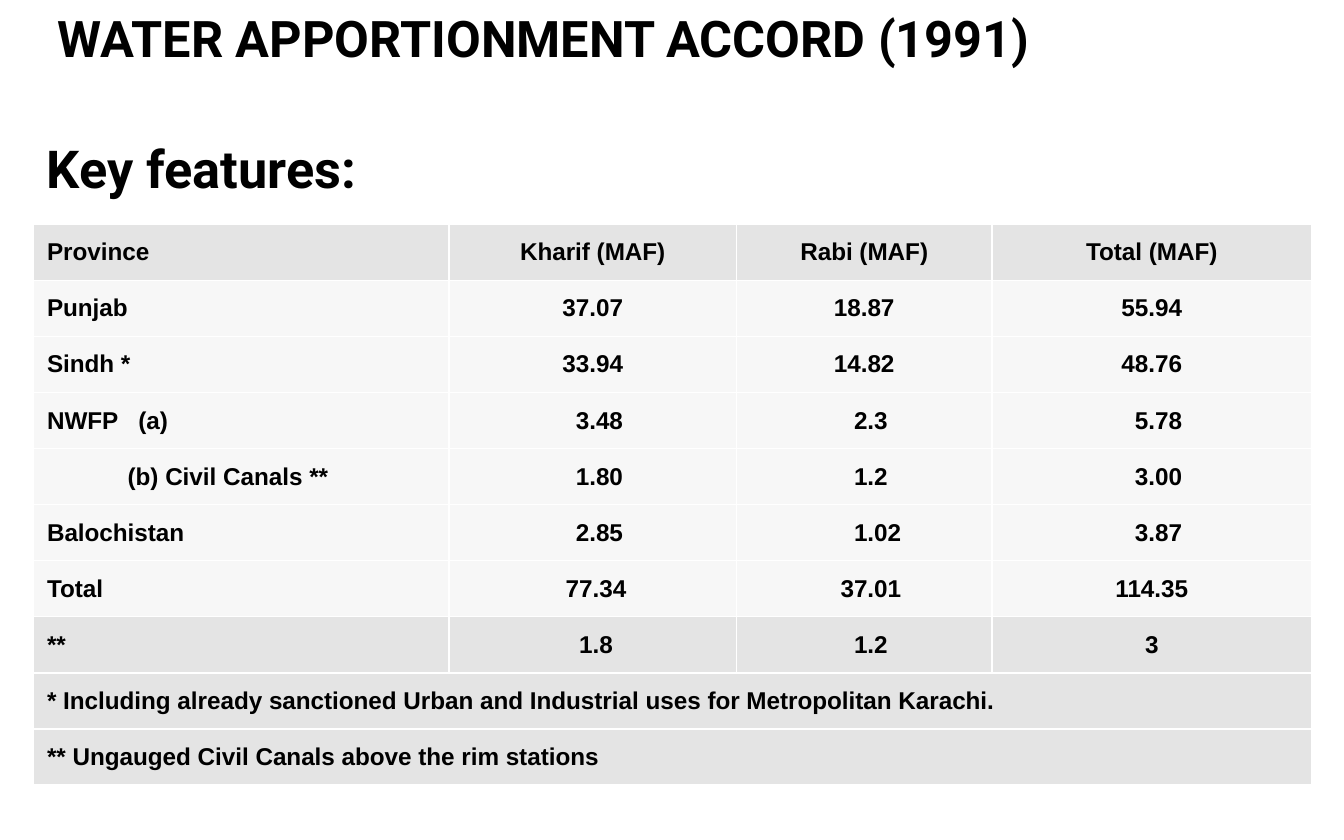
"""Build the water accord slide with its table of provincial shares."""
from pptx import Presentation
from pptx.dml.color import RGBColor
from pptx.enum.text import MSO_ANCHOR, PP_ALIGN
from pptx.util import Inches, Pt
from lxml.etree import SubElement
from pptx.oxml.ns import qn

HUES = {"ink": "000000", "band": "E4E4E4", "row": "F7F7F7"}


def write(frame, text, font="Arial", size=13, align=PP_ALIGN.LEFT):
    frame.word_wrap = True
    para = frame.paragraphs[0]
    para.alignment = align
    run = para.add_run()
    run.text = text
    run.font.name = font
    run.font.size = Pt(size)
    run.font.bold = True
    run.font.color.rgb = RGBColor.from_string(HUES["ink"])
    return para


deck = Presentation()
deck.slide_width = Inches(10)
deck.slide_height = Inches(6.25)
slide = deck.slides.add_slide(deck.slide_layouts[6])

rows = [
    ["Province", "Kharif (MAF)", "Rabi (MAF)", "Total (MAF)"],
    ["Punjab", "37.07", "18.87", "55.94"],
    ["Sindh *", "33.94", "14.82", "48.76"],
    ["NWFP\t(a)", "3.48", "2.3", "5.78"],
    ["(b) Civil Canals **", "1.80", "1.2", "3.00"],
    ["Balochistan", "2.85", "1.02", "3.87"],
    ["Total", "77.34", "37.01", "114.35"],
    ["**", "1.8", "1.2", "3"],
    ["* Including already sanctioned Urban and Industrial uses for Metropolitan Karachi."],
    ["** Ungauged Civil Canals above the rim stations"],
]
shifts = {
    3: [0, 0.1, 0.1, 0.1],
    4: [0.6, 0.1, 0.1, 0.1],
    5: [0, 0.1, 0.2, 0.1],
    6: [0, 0.05, 0.1, 0],
    7: [0, 0.05, 0.1, 0],
}
widths = [3.09, 2.14, 1.9, 2.38]

grid = slide.shapes.add_table(
    len(rows), len(widths), Inches(0.25), Inches(1.67), Inches(9.5), Inches(4.17)
).table
grid.first_row = False
grid.horz_banding = False
for col, width in zip(grid.columns, widths):
    col.width = Inches(width)

for r, row in enumerate(rows):
    grid.rows[r].height = Inches(4.17 / len(rows))
    if len(row) == 1:
        grid.cell(r, 0).merge(grid.cell(r, len(widths) - 1))
    hue = HUES["row"] if 1 <= r <= 6 else HUES["band"]
    for c in range(len(widths)):
        cell = grid.cell(r, c)
        cell.fill.solid()
        cell.fill.fore_color.rgb = RGBColor.from_string(hue)
        if c >= len(row):
            continue
        cell.vertical_anchor = MSO_ANCHOR.MIDDLE
        cell.margin_left = Inches(0.1 + shifts.get(r, [0] * 4)[c])
        cell.margin_right = Inches(0.1)
        cell.margin_top = cell.margin_bottom = Inches(0.04)
        align = PP_ALIGN.CENTER if c else PP_ALIGN.LEFT
        para = write(cell.text_frame, row[c], align=align)
        if "\t" in row[c]:
            tabs = SubElement(para._p.get_or_add_pPr(), qn("a:tabLst"))
            SubElement(tabs, qn("a:tab"), pos=str(Inches(0.68)), algn="l")

heads = [
    ("WATER APPORTIONMENT ACCORD (1991)", 27, (0.33, 0, 9.5, 0.56), MSO_ANCHOR.MIDDLE),
    ("Key features:", 28, (0.25, 0.97, 9.75, 4.93), MSO_ANCHOR.TOP),
]
for text, size, place, anchor in heads:
    frame = slide.shapes.add_textbox(*map(Inches, place)).text_frame
    frame.vertical_anchor = anchor
    frame.margin_top = frame.margin_bottom = Inches(0.04)
    write(frame, text, font="Roboto", size=size)

deck.save("out.pptx")
